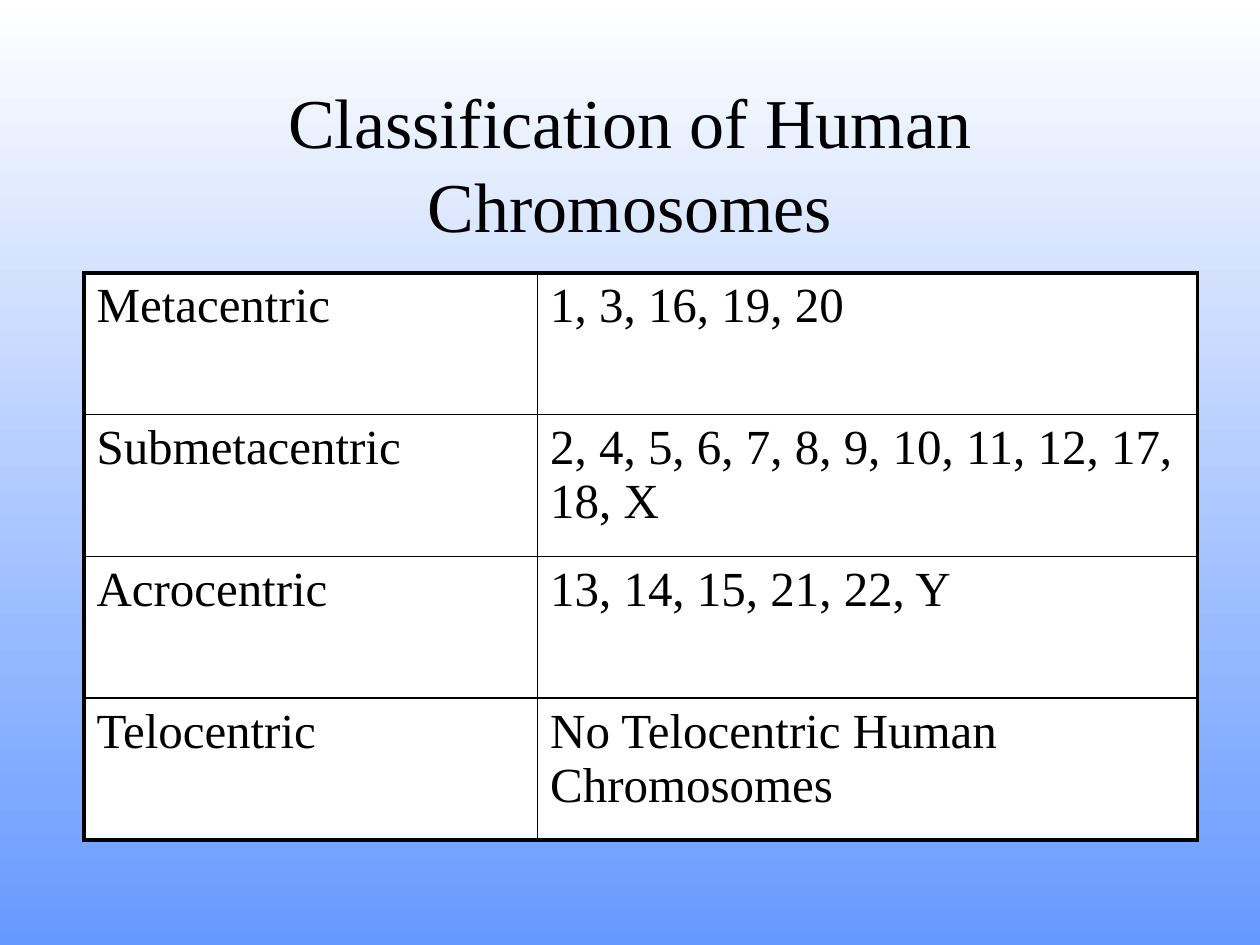
"""Build a slide that classifies human chromosomes by centromere position."""
from lxml import etree
from pptx import Presentation
from pptx.dml.color import RGBColor
from pptx.enum import text
from pptx.oxml import ns
from pptx.util import Pt

TITLE = "Classification of Human Chromosomes"
ROWS = [
    ("Metacentric", "1, 3, 16, 19, 20"),
    ("Submetacentric", "2, 4, 5, 6, 7, 8, 9, 10, 11, 12, 17, 18, X"),
    ("Acrocentric", "13, 14, 15, 21, 22, Y"),
    ("Telocentric", "No Telocentric Human Chromosomes"),
]
BLACK = RGBColor(0, 0, 0)
WHITE = RGBColor(255, 255, 255)
BLUE = RGBColor(0x66, 0x99, 0xFF)
FONT = "Times New Roman"
COL_WIDTHS = (259.2, 377.2)
ROW_HEIGHT = 81
LEFT, TOP = 48, 156
OUTER, INNER = 2.25, 1


def write(p, content, size):
    r = p.add_run()
    r.text = content
    for name, value in {"name": FONT, "size": Pt(size)}.items():
        setattr(r.font, name, value)
    r.font.color.rgb = BLACK


def add_border(cell, side, width):
    tc_pr = cell._tc.get_or_add_tcPr()
    line = etree.SubElement(tc_pr, ns.qn(f"a:ln{side}"), w=str(Pt(width)))
    fill = etree.SubElement(line, ns.qn("a:solidFill"))
    etree.SubElement(fill, ns.qn("a:srgbClr"), val=str(BLACK))


def add_title(s):
    tf = s.shapes.add_textbox(Pt(54), Pt(48), Pt(612), Pt(90)).text_frame
    tf.word_wrap = True
    tf.vertical_anchor = text.MSO_ANCHOR.MIDDLE
    p = tf.paragraphs[0]
    p.alignment = text.PP_ALIGN.CENTER
    write(p, TITLE, 40)


def add_classes(s):
    n_rows, n_cols = len(ROWS), len(COL_WIDTHS)
    table = s.shapes.add_table(
        n_rows, n_cols, Pt(LEFT), Pt(TOP), Pt(sum(COL_WIDTHS)), Pt(n_rows * ROW_HEIGHT)
    ).table
    table.first_row = table.horz_banding = False
    for column, width in zip(table.columns, COL_WIDTHS):
        column.width = Pt(width)
    for i, row in enumerate(ROWS):
        table.rows[i].height = Pt(ROW_HEIGHT)
        for j, content in enumerate(row):
            cell = table.cell(i, j)
            edges = {"L": j == 0, "R": j == n_cols - 1, "T": i == 0, "B": i == n_rows - 1}
            for side, is_outer in edges.items():
                add_border(cell, side, OUTER if is_outer else INNER)
            cell.fill.solid()
            cell.fill.fore_color.rgb = WHITE
            write(cell.text_frame.paragraphs[0], content, 28)


def main():
    prs = Presentation()
    prs.slide_width, prs.slide_height = Pt(720), Pt(540)
    s = prs.slides.add_slide(prs.slide_layouts[6])
    fill = s.background.fill
    fill.gradient()
    fill.gradient_angle = 270
    for stop, color in zip(fill.gradient_stops, (WHITE, BLUE)):
        stop.color.rgb = color
    add_title(s)
    add_classes(s)
    prs.save("out.pptx")


if __name__ == "__main__":
    main()
